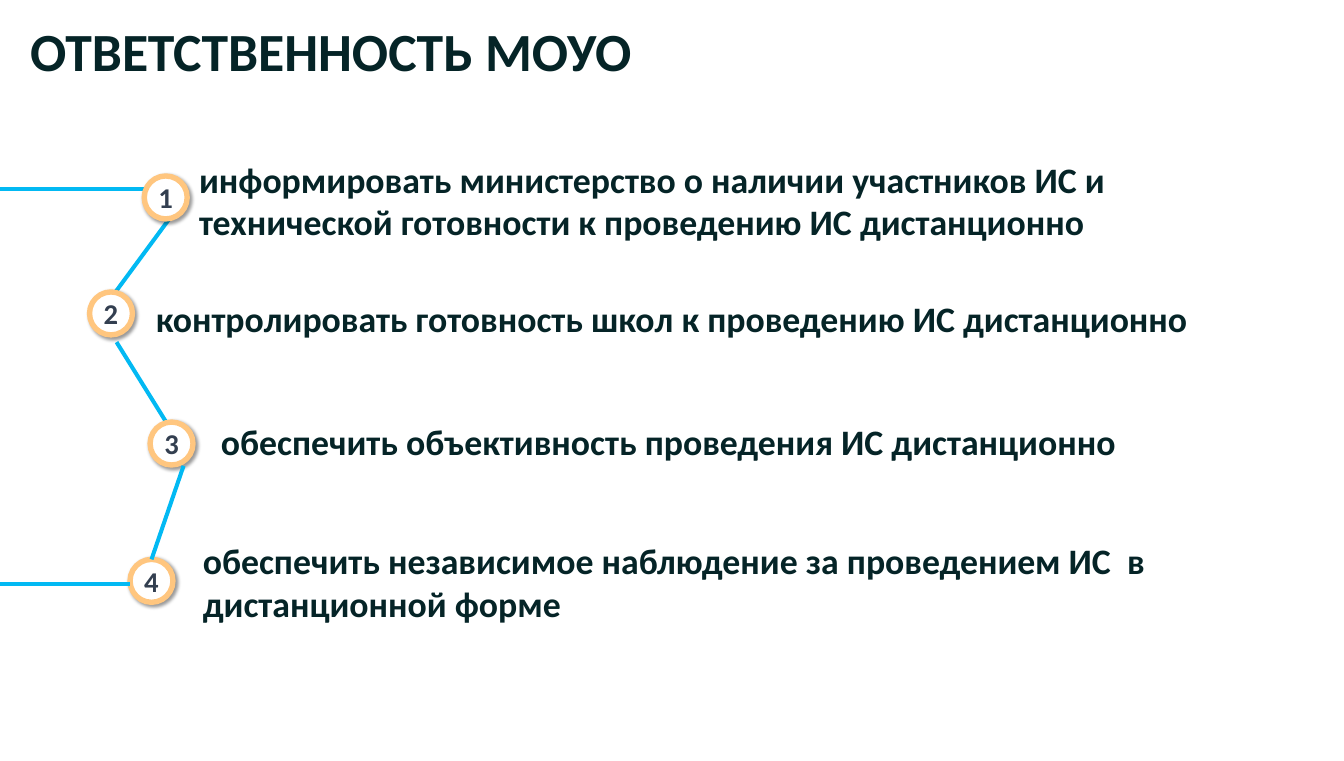
from lxml.etree import SubElement
from pptx import Presentation
from pptx.dml.color import RGBColor
from pptx.enum.shapes import MSO_CONNECTOR, MSO_SHAPE
from pptx.enum.text import MSO_ANCHOR, MSO_AUTO_SIZE, PP_ALIGN
from pptx.oxml.ns import qn
from pptx.util import Pt

INK, SLATE, BLUE, SAND, WHITE = "052427", "333F50", "02B9F3", "FFC67F", "FFFFFF"
LINE = 48.8  # height of one 40 pt line

# Text, left edge, top and number of lines of each duty
DUTIES = [
    ("информировать министерство о наличии участников ИС и технической "
     "готовности к проведению ИС дистанционно", 222.5, 175.7, 2),
    ("контролировать готовность школ к проведению ИС дистанционно", 174.2, 332.6, 1),
    ("обеспечить объективность проведения ИС дистанционно", 247, 470.9, 1),
    ("обеспечить независимое наблюдение за проведением ИС  в "
     "дистанционной форме", 226.8, 604.8, 2),
]
SPOTS = [(161.3, 196.6), (100.1, 326.2), (167.8, 471.6), (145.4, 625)]


def hue(code):
    return RGBColor.from_string(code)


def write(para, text, size=40, color=INK, align=PP_ALIGN.LEFT, before=0):
    run = para.add_run()
    run.text = text
    run.font.name, run.font.size, run.font.bold = "Calibri", Pt(size), True
    run.font.color.rgb = hue(color)
    para.alignment, para.space_before = align, Pt(before)


class Board:
    def __init__(self, slide, font=40, wire=4.5, ring=6, dot=48):
        self.slide, self.font = slide, font
        self.wire, self.ring, self.dot = wire, ring, dot

    def place(self, holder, left, top, width, height):
        holder.left, holder.top = Pt(left), Pt(top)
        holder.width, holder.height = Pt(width), Pt(height)
        frame = holder.text_frame
        frame.auto_size, frame.word_wrap = MSO_AUTO_SIZE.NONE, True
        frame.vertical_anchor = MSO_ANCHOR.TOP
        return frame

    def title(self, text):
        frame = self.place(self.slide.shapes.title, 26.6, 15.8, 720, 80)
        write(frame.paragraphs[0], text, size=60)

    def list(self, items):
        base, last = items[1][1], items[0][2]
        frame = self.place(self.slide.placeholders[1], base - 7.2, last - 3.6, 1237, 540)
        for i, (text, left, top, rows) in enumerate(items):
            para = frame.add_paragraph() if i else frame.paragraphs[0]
            write(para, text, size=self.font, before=round(top - last, 1))
            props = para._p.get_or_add_pPr()
            props.set("marL", str(Pt(left - base)))
            props.set("indent", "0")
            SubElement(props, qn("a:buNone"))
            last = top + rows * LINE

    def link(self, x1, y1, x2, y2, goal=None):
        line = self.slide.shapes.add_connector(
            MSO_CONNECTOR.STRAIGHT, Pt(x1), Pt(y1), Pt(x2), Pt(y2))
        line.line.color.rgb, line.line.width = hue(BLUE), Pt(self.wire)
        SubElement(line._element.spPr, qn("a:effectLst"))
        if goal is not None:
            line.end_connect(goal, 0)

    def badge(self, label, left, top):
        dot = self.slide.shapes.add_shape(
            MSO_SHAPE.OVAL, Pt(left), Pt(top), Pt(self.dot), Pt(self.dot))
        dot.fill.solid()
        dot.fill.fore_color.rgb = hue(WHITE)
        dot.line.color.rgb, dot.line.width = hue(SAND), Pt(self.ring)
        self.shade(dot)
        frame = dot.text_frame
        frame.margin_left = frame.margin_right = frame.margin_top = frame.margin_bottom = 0
        frame.word_wrap, frame.vertical_anchor = False, MSO_ANCHOR.MIDDLE
        write(frame.paragraphs[0], label, size=32, color=SLATE, align=PP_ALIGN.CENTER)
        return dot

    def shade(self, shape):
        shape.shadow.inherit = False
        effects = shape._element.spPr.find(qn("a:effectLst"))
        cast = SubElement(effects, qn("a:outerShdw"), blurRad=str(Pt(4)), dist=str(Pt(3)),
                          dir=str(45 * 60000), algn="tl", rotWithShape="0")
        tone = SubElement(cast, qn("a:srgbClr"), val="000000")
        SubElement(tone, qn("a:alpha"), val="40000")


def main():
    deck = Presentation()
    deck.slide_width, deck.slide_height = Pt(1502.64), Pt(850.32)
    board = Board(deck.slides.add_slide(deck.slide_layouts[1]))

    # Title and duties
    board.title("ОТВЕТСТВЕННОСТЬ МОУО")
    board.list(DUTIES)

    # Path behind the badges
    board.link(130.3, 382.3, 185.8, 471.6)
    board.link(0, 211.7, 176.4, 211.7)
    board.link(198.7, 231.8, 126, 330.5)

    # Numbered badges
    dots = [board.badge(str(i), *spot) for i, spot in enumerate(SPOTS, 1)]

    # Path in front of the badges
    board.link(0, 653, 145.4, 653)
    board.link(205.2, 520.6, 169.4, 625, goal=dots[-1])

    deck.save("out.pptx")


if __name__ == "__main__":
    main()
